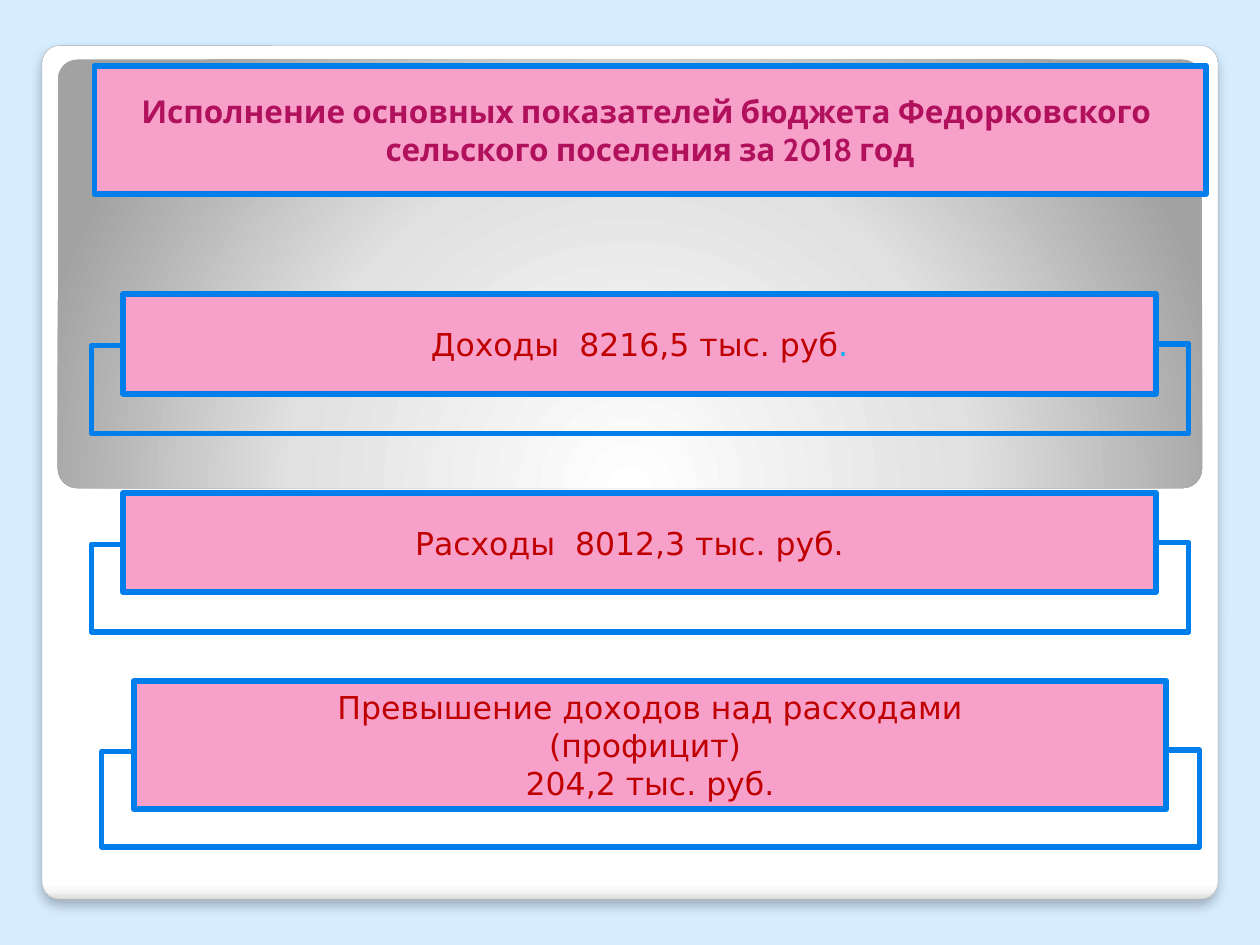
from pptx import Presentation
from pptx import util as u
from pptx.dml.color import RGBColor
from pptx.enum import shapes, text
from pptx.oxml import parse_xml
from pptx.oxml.ns import nsdecls, qn

Pt = u.Pt
COLORS = {
    "sky": "D6ECFF", "edge": "A4A4A4", "pink": "F7A1CA", "blue": "007EEB",
    "title": "B0105C", "red": "C00000", "dot": "00B0F0", "black": "000000",
}
PANEL_STOPS = [(0, "FFFFFF"), (98, "FFFFFF"), (99, "F7F7F7"), (100, "DADADA")]
GREY_STOPS = [(0, "FFFFFF"), (55, "E1E1E1"), (100, "A2A2A2")]
LINEAR = '<a:lin ang="5400000" scaled="0"/>'
RADIAL = ('<a:path path="circle"><a:fillToRect l="50000" t="175000" '
          'r="50000" b="-75000"/></a:path>')
TITLE_FONT = {"name": "Cabin", "size": Pt(18), "bold": True}
BODY_FONT = {"name": "DejaVu Sans", "size": Pt(18), "bold": False}
BOX_WIDTH = 590


def rgb(name):
    return RGBColor.from_string(COLORS[name])


def add_shape(slide, kind, box):
    sp = slide.shapes.add_shape(kind, *map(Pt, box))
    sp.shadow.inherit = False
    return sp


def add_panel(slide, box, radius, stops, direction):
    sp = add_shape(slide, shapes.MSO_SHAPE.ROUNDED_RECTANGLE, box)
    sp.adjustments[0] = radius
    sp.line.fill.background()
    gs = "".join(f'<a:gs pos="{pos * 1000}"><a:srgbClr val="{c}"/></a:gs>'
                 for pos, c in stops)
    sp._element.spPr.insert(2, parse_xml(
        f'<a:gradFill {nsdecls("a")} rotWithShape="1">'
        f'<a:gsLst>{gs}</a:gsLst>{direction}</a:gradFill>'))
    return sp


def add_card(slide):
    sp = add_panel(slide, (24, 26, 672, 488), 0.021, PANEL_STOPS, LINEAR)
    sp.line.color.rgb = rgb("edge")
    sp.line.width = Pt(0.16)
    sp._element.spPr.find(qn("a:effectLst")).append(parse_xml(
        f'<a:outerShdw {nsdecls("a")} blurRad="{Pt(6)}" dist="{Pt(4)}" '
        f'dir="5400000" algn="t" rotWithShape="0">'
        f'<a:srgbClr val="{COLORS["black"]}"><a:alpha val="25000"/>'
        f'</a:srgbClr></a:outerShdw>'))


def add_box(slide, box, lines, font):
    sp = add_shape(slide, shapes.MSO_SHAPE.RECTANGLE, box)
    sp.fill.solid()
    sp.fill.fore_color.rgb = rgb("pink")
    sp.line.color.rgb = rgb("blue")
    sp.line.width = Pt(3.35)
    tf = sp.text_frame
    tf.word_wrap = True
    tf.vertical_anchor = text.MSO_ANCHOR.MIDDLE
    for i, runs in enumerate(lines):
        p = tf.add_paragraph() if i else tf.paragraphs[0]
        p.alignment = text.PP_ALIGN.CENTER
        for words, color in runs:
            r = p.add_run()
            r.text = words
            for key, value in font.items():
                setattr(r.font, key, value)
            r.font.color.rgb = rgb(color)


def add_loop(slide, left, top, drop):
    cx = slide.shapes.add_connector(
        shapes.MSO_CONNECTOR.ELBOW, Pt(left), Pt(top),
        Pt(left + BOX_WIDTH), Pt(top + 1))
    cx.line.color.rgb = rgb("blue")
    cx.line.width = Pt(3)
    spPr = cx._element.spPr
    xfrm = spPr.find(qn("a:xfrm"))
    xfrm.set("rot", "10800000")
    xfrm.set("flipH", "1")
    geom = spPr.find(qn("a:prstGeom"))
    geom.set("prst", "bentConnector5")
    guides = geom.find(qn("a:avLst"))
    for i, ratio in enumerate((-0.031, -drop, 1.032), 1):
        guides.append(parse_xml(
            f'<a:gd {nsdecls("a")} name="adj{i}" '
            f'fmla="val {round(ratio * 100000)}"/>'))
    spPr.append(parse_xml(f'<a:effectLst {nsdecls("a")}/>'))


def main():
    prs = Presentation()
    prs.slide_width, prs.slide_height = Pt(720), Pt(540)
    slide = prs.slides.add_slide(prs.slide_layouts[6])
    slide.background.fill.solid()
    slide.background.fill.fore_color.rgb = rgb("sky")

    add_card(slide)
    add_panel(slide, (33, 34, 654, 245), 0.046, GREY_STOPS, RADIAL)
    add_box(slide, (54, 37.5, 635, 73.5), [
        [("Исполнение основных показателей бюджета Федорковского ", "title")],
        [("сельского поселения за 2018 год", "title")],
    ], TITLE_FONT)

    indicators = [
        (70.5, 168, 57, 196.5, 50.5,
         [[("Доходы  8216,5 тыс. руб", "red"), (".", "dot")]]),
        (70.5, 281.5, 57, 310, 50.5,
         [[("Расходы  8012,3 тыс. руб.  ", "red")]]),
        (76.5, 389, 73.5, 428.5, 55,
         [[("Превышение доходов над расходами", "red")],
          [("(профицит) ", "red")],
          [("204,2 тыс. руб.", "red")]]),
    ]
    for left, top, height, loop_top, drop, lines in indicators:
        add_box(slide, (left, top, BOX_WIDTH, height), lines, BODY_FONT)
        add_loop(slide, left, loop_top, drop)

    prs.save("out.pptx")


if __name__ == "__main__":
    main()
